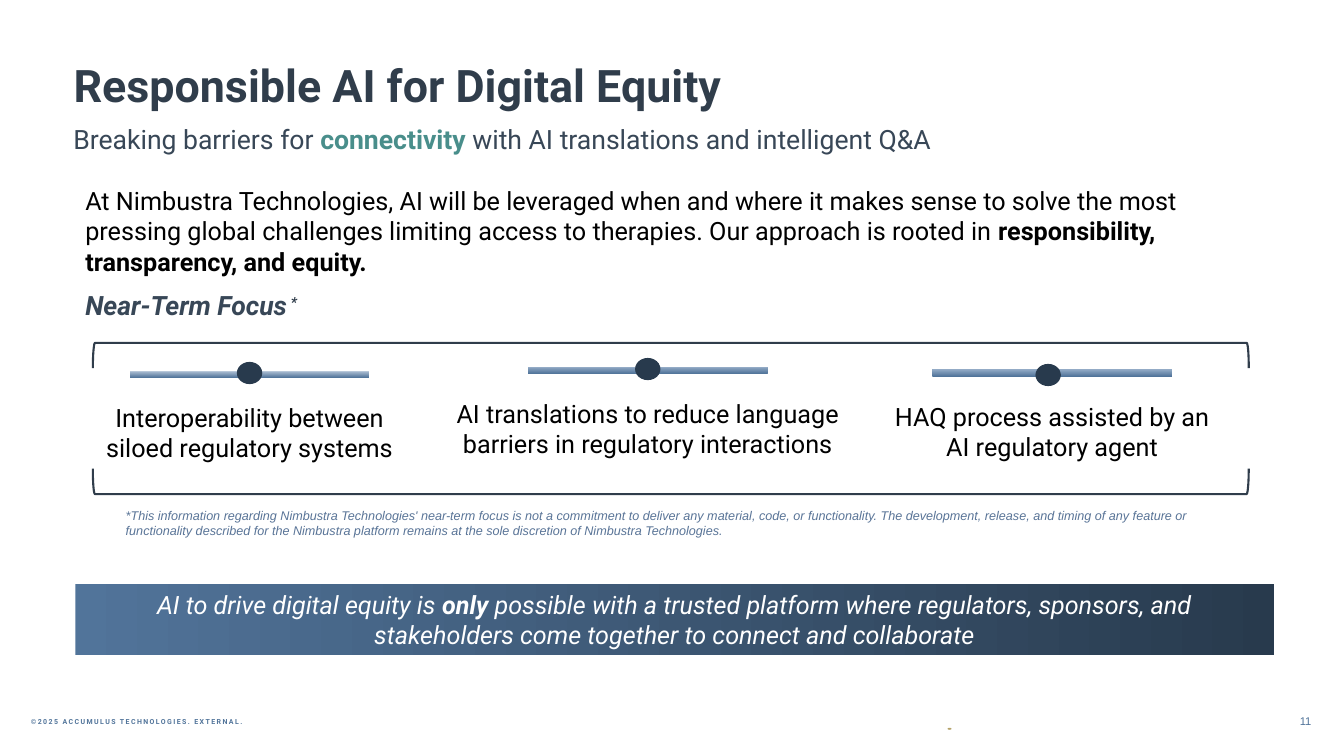
from pptx import Presentation
from pptx.dml.color import RGBColor
from pptx.enum.shapes import MSO_SHAPE
from pptx.enum.text import MSO_ANCHOR, MSO_AUTO_SIZE, PP_ALIGN
from pptx.util import Cm, Pt

NAVY, SLATE, INK = "283A4D", "384757", "303D4B"
BLUE, PALE, MIST = "51749A", "93ABC6", "B7C7D9"
TEAL, GOLD, NOTE = "498E8B", "B4A269", "597497"
BLACK, WHITE = "000000", "FFFFFF"


def rgb(value):
    """Return the colour for a hex string."""
    return RGBColor.from_string(value)


def write(tf, *runs, size=18, color=BLACK, font="Roboto", bold=False, italic=False,
          align=PP_ALIGN.LEFT, anchor=MSO_ANCHOR.TOP, line=None, spacing=None):
    """Write one paragraph of strings or (string, overrides) pairs."""
    tf.word_wrap = True
    tf.auto_size = MSO_AUTO_SIZE.NONE
    tf.vertical_anchor = anchor
    p = tf.paragraphs[0]
    p.alignment = align
    if line:
        p.line_spacing = line
    for run in runs:
        text, own = (run, {}) if isinstance(run, str) else run
        r = p.add_run()
        r.text = text
        r.font.name, r.font.size = font, Pt(size)
        r.font.bold, r.font.italic = own.get("bold", bold), italic
        r.font.color.rgb = rgb(own.get("color", color))
        if spacing:
            r.font._element.set("spc", str(spacing))


def add_text(s, box, *runs, **fmt):
    """Add a text box at a box in centimetres."""
    tb = s.shapes.add_textbox(*map(Cm, box))
    write(tb.text_frame, *runs, **fmt)


def add_shape(s, kind, box, fill=None, grad=None, angle=0, line=None):
    """Add a preset shape with a solid, gradient or empty fill."""
    sp = s.shapes.add_shape(kind, *map(Cm, box))
    sp.shadow.inherit = False
    if grad:
        sp.fill.gradient()
        sp.fill.gradient_angle = angle
        for stop, color in zip(sp.fill.gradient_stops, grad):
            stop.color.rgb = rgb(color)
    elif fill:
        sp.fill.solid()
        sp.fill.fore_color.rgb = rgb(fill)
    else:
        sp.fill.background()
    if line:
        sp.line.color.rgb = rgb(line)
        sp.line.width = Pt(1.5)
    else:
        sp.line.fill.background()
    return sp


def add_header(s, x, y):
    """Place the title and the subtitle below it."""
    title = s.shapes.title
    title.left, title.top, title.width, title.height = map(Cm, (x, y, 29.92, 1.63))
    write(title.text_frame, "Responsible AI for Digital Equity", size=32, color=INK,
          bold=True, anchor=MSO_ANCHOR.MIDDLE, line=0.9)
    add_text(s, (x, y + 1.57, 27.48, 1.07), "Breaking barriers for ",
             ("connectivity", {"color": TEAL, "bold": True}),
             " with AI translations and intelligent Q&A", size=19, color=SLATE)


def add_intro(s, x, y):
    """Place the introduction and the heading of the focus area."""
    add_text(s, (x, y, 29.57, 2.4),
             "At Nimbustra Technologies, AI will be leveraged when and where it makes sense "
             "to solve the most pressing global challenges limiting access to therapies. "
             "Our approach is rooted in ",
             ("responsibility, transparency, and equity.", {"bold": True}))
    heading = {"bold": True, "italic": True}
    add_text(s, (x, y + 2.61, 6, 1.07), "Near-Term Focus", size=19, color=SLATE, **heading)
    add_text(s, (x + 5.18, y + 2.71, 1.09, 0.69), "*", size=10, color=INK, **heading)


def add_focus_item(s, x, y, w, text, light=PALE, dot_dx=0, dot_dy=0):
    """Place a focus text centred under a bar with a dot."""
    mid = x + w / 2
    add_text(s, (x, y, w, 1.8), text, align=PP_ALIGN.CENTER)
    add_shape(s, MSO_SHAPE.RECTANGLE, (mid - 3.02, y - 0.67, 6.04, 0.18),
              grad=(BLUE, light), angle=90)
    add_shape(s, MSO_SHAPE.OVAL, (mid - 0.32 + dot_dx, y - 0.89 + dot_dy, 0.64, 0.56),
              fill=NAVY)


def add_focus(s, x, y, w, h):
    """Place the bracketed focus area and its footnote."""
    depth = 0.64
    for mid, turn in ((y + depth / 2, 90), (y + h - depth / 2, 270)):
        bracket = add_shape(s, MSO_SHAPE.LEFT_BRACKET,
                            (x + (w - depth) / 2, mid - w / 2, depth, w), line=INK)
        bracket.rotation = turn
    add_focus_item(s, x - 0.1, y + 1.37, 8.1,
                   "Interoperability between siloed regulatory systems", MIST)
    add_focus_item(s, x + 8.84, y + 1.27, 10.29,
                   "AI translations to reduce language barriers in regulatory interactions")
    add_focus_item(s, x + 19.96, y + 1.34, 8.43,
                   "HAQ process assisted by an AI regulatory agent",
                   dot_dx=-0.1, dot_dy=0.08)
    add_text(s, (x + 0.58, y + h + 0.23, 28.55, 1.02),
             "*This information regarding Nimbustra Technologies' near-term focus is not a "
             "commitment to deliver any material, code, or functionality. The development, "
             "release, and timing of any feature or functionality described for the Nimbustra "
             "platform remains at the sole discretion of Nimbustra Technologies.",
             size=9, color=NOTE, font="Arial", italic=True)


def add_banner(s, *box):
    """Place the closing statement on a gradient band."""
    sp = add_shape(s, MSO_SHAPE.RECTANGLE, box, grad=(BLUE, NAVY))
    write(sp.text_frame, "AI to drive digital equity is ", ("only", {"bold": True}),
          " possible with a trusted platform where regulators, sponsors, and stakeholders "
          "come together to connect and collaborate",
          color=WHITE, italic=True, align=PP_ALIGN.CENTER, anchor=MSO_ANCHOR.MIDDLE)


def add_footer(s, x, y):
    """Place the copyright line, the small mark and the page number."""
    add_text(s, (x, y, 16.94, 0.48), "©2025 ACCUMULUS TECHNOLOGIES. EXTERNAL.",
             size=5, color=BLUE, bold=True, spacing=100)
    add_shape(s, MSO_SHAPE.OVAL, (x + 23.35, y + 0.38, 0.1, 0.05), fill=GOLD)
    add_text(s, (x + 31.78, y - 0.08, 0.99, 0.61), "11", size=8, color=BLUE,
             font="Arial", align=PP_ALIGN.RIGHT)


def main():
    """Build the slide and save it."""
    prs = Presentation()
    prs.slide_width, prs.slide_height = Cm(33.87), Cm(19.05)
    s = prs.slides.add_slide(prs.slide_layouts[5])
    add_header(s, 1.6, 1.4)
    add_intro(s, 1.9, 4.55)
    add_focus(s, 2.34, 8.64, 29.13, 3.81)
    add_banner(s, 1.9, 14.71, 30.2, 1.8)
    add_footer(s, 0.53, 17.96)
    prs.save("out.pptx")


if __name__ == "__main__":
    main()
